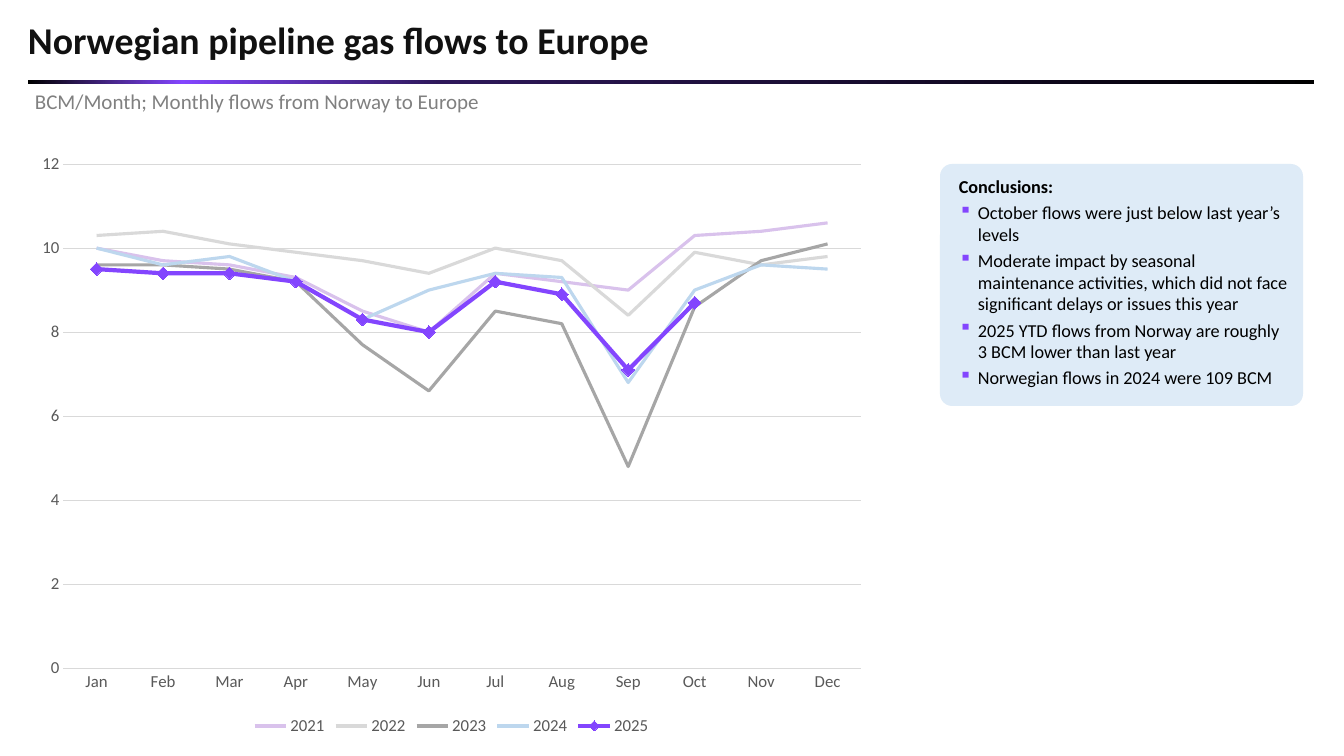
from lxml import etree
from pptx import Presentation
from pptx.chart.data import CategoryChartData
from pptx.dml.color import RGBColor
from pptx.enum.chart import XL_CHART_TYPE, XL_LEGEND_POSITION, XL_MARKER_STYLE, XL_TICK_MARK
from pptx.enum.shapes import MSO_SHAPE
from pptx.enum.text import MSO_ANCHOR
from pptx.oxml import parse_xml
from pptx.oxml.ns import nsdecls, qn
from pptx.util import Pt

PX = 12192000 / 1344
FONT = "Calibri"
RECTANGLE, ROUNDED = MSO_SHAPE.RECTANGLE, MSO_SHAPE.ROUNDED_RECTANGLE
MIDDLE = MSO_ANCHOR.MIDDLE
LINE_CHART = XL_CHART_TYPE.LINE_MARKERS
LEGEND_BOTTOM = XL_LEGEND_POSITION.BOTTOM
NO_MARKER, DIAMOND = XL_MARKER_STYLE.NONE, XL_MARKER_STYLE.DIAMOND
NO_TICK = XL_TICK_MARK.NONE

BLACK = RGBColor(0x00, 0x00, 0x00)
TITLE_INK = RGBColor(0x11, 0x11, 0x11)
GRAY = RGBColor(0x80, 0x80, 0x80)
AXIS_INK = RGBColor(0x59, 0x59, 0x59)
GRID = RGBColor(0xD9, 0xD9, 0xD9)
LILAC = RGBColor(0xD9, 0xC2, 0xEC)
MID_GRAY = RGBColor(0xA6, 0xA6, 0xA6)
LIGHT_BLUE = RGBColor(0xBD, 0xD7, 0xEE)
PURPLE = RGBColor(0x83, 0x45, 0xFE)
DARK_PURPLE = RGBColor(0x2E, 0x18, 0x5A)
PANEL_BLUE = RGBColor(0xDE, 0xEB, 0xF7)


def box(*lengths):
    """Turn left, top, width and height in px into EMU."""
    return [round(length * PX) for length in lengths]


def style(font, size, color, bold=False):
    font.name, font.size, font.bold = FONT, Pt(size), bold
    font.color.rgb = color


presentation = Presentation()
presentation.slide_width, presentation.slide_height = box(1344, 756)
slide = presentation.slides.add_slide(presentation.slide_layouts[6])
shapes = slide.shapes

# Title, rule and subtitle
rule = shapes.add_shape(RECTANGLE, *box(28, 80, 1286, 4))
rule.shadow.inherit = False
rule.line.fill.background()
rule.fill.gradient()
rule.fill.gradient_angle = 0
stop_list = rule._element.spPr.find(qn("a:gradFill")).find(qn("a:gsLst"))
for old_stop in list(stop_list):
    stop_list.remove(old_stop)
for percent, color in [(0, BLACK), (12, PURPLE), (32, DARK_PURPLE), (100, BLACK)]:
    stop = etree.SubElement(stop_list, qn("a:gs"), pos=str(percent * 1000))
    etree.SubElement(stop, qn("a:srgbClr"), val=str(color))

title = shapes.add_textbox(*box(18, 2, 1049, 79)).text_frame
title.word_wrap = True
title.vertical_anchor = MIDDLE
title.margin_top, title.margin_bottom = box(4, 0)
title.text = "Norwegian pipeline gas flows to Europe"
title.paragraphs[0].line_spacing = 0.8
style(title.paragraphs[0].font, 27, TITLE_INK, bold=True)

subtitle = shapes.add_textbox(*box(25, 84, 468, 35)).text_frame
subtitle.word_wrap = False
subtitle.text = "BCM/Month; Monthly flows from Norway to Europe"
style(subtitle.paragraphs[0].font, 15, GRAY)

# Conclusions
panel = shapes.add_shape(ROUNDED, *box(940, 164, 363, 242))
panel.adjustments[0] = 0.05
panel.shadow.inherit = False
panel.fill.solid()
panel.fill.fore_color.rgb = PANEL_BLUE
panel.line.fill.background()

conclusions = shapes.add_textbox(*box(949, 170, 348, 226)).text_frame
conclusions.word_wrap = True
heading = conclusions.paragraphs[0]
heading.text = "Conclusions:"
heading.space_after = Pt(3)
style(heading.font, 13, BLACK, bold=True)
for finding in [
    "October flows were just below last year’s levels",
    "Moderate impact by seasonal maintenance activities, "
    "which did not face significant delays or issues this year",
    "2025 YTD flows from Norway are roughly 3 BCM lower than last year",
    "Norwegian flows in 2024 were 109 BCM",
]:
    paragraph = conclusions.add_paragraph()
    paragraph.text = finding
    paragraph.space_after = Pt(3)
    properties = paragraph._p.get_or_add_pPr()
    indent = round(19 * PX)
    properties.set("marL", str(indent))
    properties.set("indent", str(-indent))
    bullet_color = etree.SubElement(properties, qn("a:buClr"))
    etree.SubElement(bullet_color, qn("a:srgbClr"), val=str(PURPLE))
    etree.SubElement(properties, qn("a:buChar"), char="▪")
    style(paragraph.font, 13, BLACK)

# Monthly flows by year
flows = [
    ("2021", LILAC, [10, 9.7, 9.6, 9.3, 8.5, 8, 9.4, 9.2, 9, 10.3, 10.4, 10.6]),
    ("2022", GRID, [10.3, 10.4, 10.1, 9.9, 9.7, 9.4, 10, 9.7, 8.4, 9.9, 9.6, 9.8]),
    ("2023", MID_GRAY, [9.6, 9.6, 9.5, 9.2, 7.7, 6.6, 8.5, 8.2, 4.8, 8.6, 9.7, 10.1]),
    ("2024", LIGHT_BLUE, [10, 9.6, 9.8, 9.2, 8.3, 9, 9.4, 9.3, 6.8, 9, 9.6, 9.5]),
    ("2025", PURPLE, [9.5, 9.4, 9.4, 9.2, 8.3, 8, 9.2, 8.9, 7.1, 8.7, None, None]),
]
chart_data = CategoryChartData()
chart_data.categories = "Jan Feb Mar Apr May Jun Jul Aug Sep Oct Nov Dec".split()
for year, _, values in flows:
    chart_data.add_series(year, values)
chart = shapes.add_chart(LINE_CHART, *box(25, 142, 853, 598), chart_data).chart
chart.has_title = False
style(chart.font, 12, AXIS_INK)
chart.has_legend = True
chart.legend.position = LEGEND_BOTTOM
chart.legend.include_in_layout = False
style(chart.legend.font, 12, AXIS_INK)

plot = chart.plots[0]
plot.vary_by_categories = False
for series, (year, color, _) in zip(plot.series, flows):
    current = year == "2025"
    series.smooth = False
    series.format.line.color.rgb = color
    series.format.line.width = Pt(3 if current else 2.25)
    series.marker.style = DIAMOND if current else NO_MARKER
    if current:
        series.marker.size = 9
        series.marker.format.fill.solid()
        series.marker.format.fill.fore_color.rgb = color
        series.marker.format.line.color.rgb = color

months, volume = chart.category_axis, chart.value_axis
for axis in (months, volume):
    axis.major_tick_mark = axis.minor_tick_mark = NO_TICK
    style(axis.tick_labels.font, 12, AXIS_INK)
volume.minimum_scale, volume.maximum_scale, volume.major_unit = 0, 12, 2
volume.tick_labels.number_format = "#,##0"
volume.tick_labels.number_format_is_linked = False
volume.format.line.fill.background()
for line in (months.format.line, volume.major_gridlines.format.line):
    line.color.rgb = GRID
    line.width = Pt(0.75)

plot_area = chart._chartSpace.chart.plotArea
for old_layout in plot_area.findall(qn("c:layout")):
    plot_area.remove(old_layout)
plot_area.insert(0, parse_xml(
    f'<c:layout {nsdecls("c")}><c:manualLayout><c:layoutTarget val="inner"/>'
    '<c:xMode val="edge"/><c:yMode val="edge"/><c:x val="0.045"/><c:y val="0.037"/>'
    '<c:w val="0.935"/><c:h val="0.843"/></c:manualLayout></c:layout>'))

presentation.save("out.pptx")
